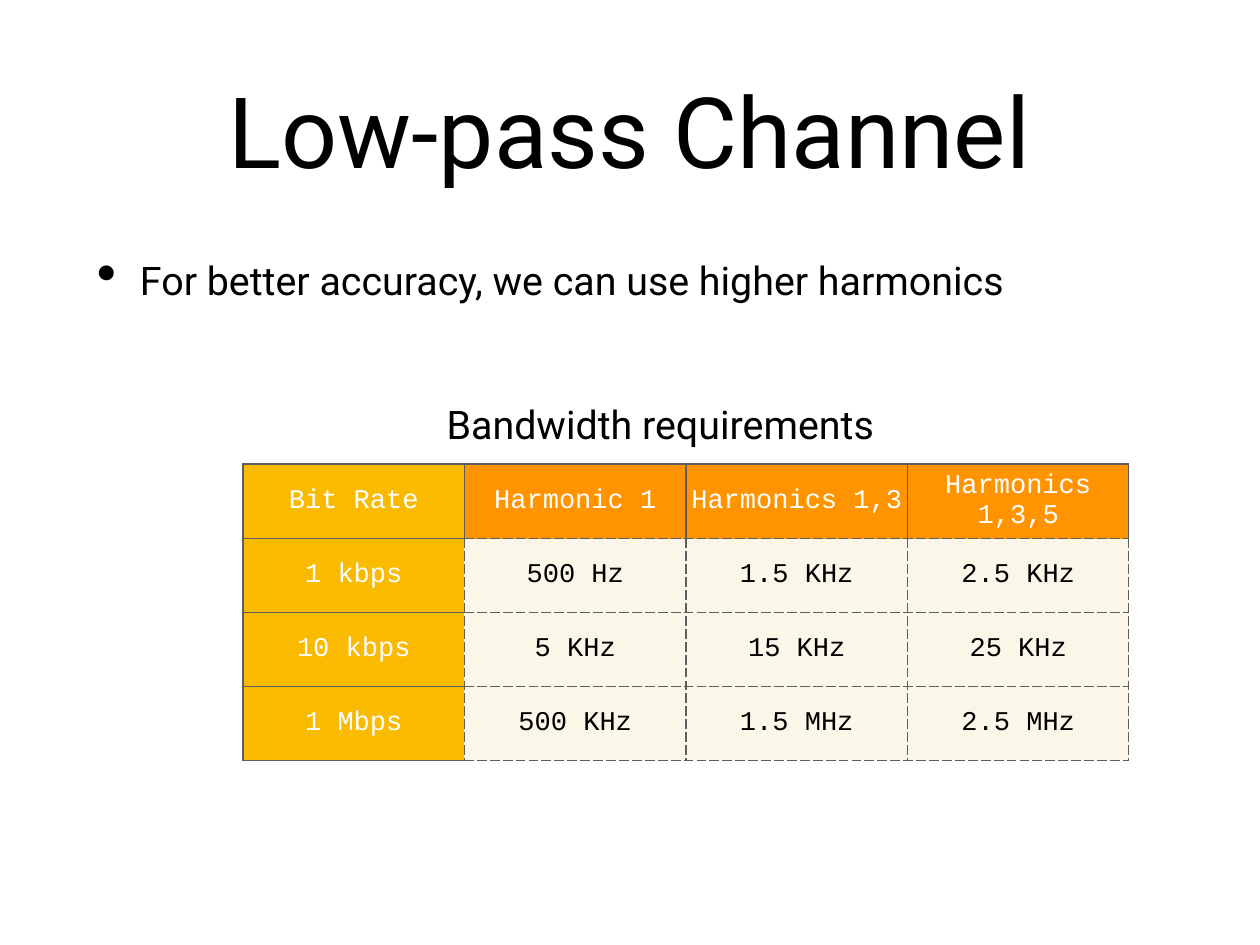
"""Build the low-pass channel slide with its bandwidth table."""
from dataclasses import dataclass
from typing import Any

from lxml.etree import SubElement
from pptx import Presentation
from pptx.dml.color import RGBColor
from pptx.enum.text import MSO_ANCHOR, PP_ALIGN
from pptx.oxml.ns import qn
from pptx.util import Emu, Pt

SCALE = 10321
INSET = 5
SANS, MONO = "Roboto", "Courier New"
BLACK, WHITE, EDGE = "000000", "FFFFFF", "5D5D5D"
ORANGE, GOLD, CREAM = "FF9400", "F9BA00", "FAF7E9"
SIDES = ("left", "right", "top", "bottom")
ROWS = (
    ("Bit Rate", "Harmonic 1", "Harmonics 1,3", "Harmonics 1,3,5"),
    ("1 kbps", "500 Hz", "1.5 KHz", "2.5 KHz"),
    ("10 kbps", "5 KHz", "15 KHz", "25 KHz"),
    ("1 Mbps", "500 KHz", "1.5 MHz", "2.5 MHz"),
)


@dataclass(frozen=True)
class Label:
    text: str
    left: int
    top: int
    width: int
    height: int
    size: int
    align: PP_ALIGN = PP_ALIGN.CENTER
    anchor: MSO_ANCHOR = MSO_ANCHOR.MIDDLE
    wrap: bool = True
    bullet: bool = False


LABELS = (
    Label("Low-pass Channel", 92, 25, 1076, 209, 80),
    Label("For better accuracy, we can use higher harmonics", 92, 251, 1076, 610, 32,
          align=PP_ALIGN.LEFT, anchor=MSO_ANCHOR.TOP, bullet=True),
    Label("Bandwidth requirements", 440, 396, 441, 56, 32, wrap=False),
)


def px(count: int) -> Emu:
    return Emu(count * SCALE)


def hue(code: str) -> RGBColor:
    return RGBColor.from_string(code)


def apply(target: Any, values: dict[str, Any]) -> None:
    for name, value in values.items():
        setattr(target, name, value)


def style(para: Any, font: str, size: int, color: str, align: PP_ALIGN) -> None:
    para.alignment = align
    apply(para.font, {"name": font, "size": Pt(size)})
    para.font.color.rgb = hue(color)


def add_bullet(para: Any) -> None:
    props = para._p.get_or_add_pPr()
    props.set("marL", str(px(43)))
    props.set("indent", str(-px(43)))
    SubElement(props, qn("a:buSzPct"), val="145000")
    SubElement(props, qn("a:buChar"), char="•")


def add_label(slide: Any, label: Label) -> None:
    box = slide.shapes.add_textbox(*map(px, (label.left, label.top, label.width, label.height)))
    frame = box.text_frame
    apply(frame, {f"margin_{side}": px(INSET) for side in SIDES})
    apply(frame, {"word_wrap": label.wrap, "vertical_anchor": label.anchor})
    para = frame.paragraphs[0]
    para.text = label.text
    style(para, SANS, label.size, BLACK, label.align)
    if label.bullet:
        add_bullet(para)


def add_edge(cell: Any, side: str, dash: bool) -> None:
    props = cell._tc.get_or_add_tcPr()
    line = SubElement(props, qn(f"a:ln{side}"), w=str(Pt(1)))
    fill = SubElement(line, qn("a:solidFill"))
    SubElement(fill, qn("a:srgbClr"), val=EDGE)
    SubElement(line, qn("a:prstDash"), val="lgDash" if dash else "solid")


def fill_cell(cell: Any, text: str, row: int, col: int) -> None:
    inner = row > 0 and col > 0
    dashes = {"L": inner, "R": row > 0, "T": inner, "B": col > 0}
    for side, dash in dashes.items():
        add_edge(cell, side, dash)
    cell.fill.solid()
    cell.fill.fore_color.rgb = hue(CREAM if inner else ORANGE if col else GOLD)
    apply(cell, {f"margin_{side}": px(INSET) for side in SIDES})
    apply(cell, {"text": text, "vertical_anchor": MSO_ANCHOR.MIDDLE})
    style(cell.text_frame.paragraphs[0], MONO, 22, BLACK if inner else WHITE, PP_ALIGN.CENTER)


def add_grid(slide: Any) -> None:
    place = map(px, (243, 464, 886, 295))
    table = slide.shapes.add_table(len(ROWS), len(ROWS[0]), *place).table
    for row, texts in enumerate(ROWS):
        for col, text in enumerate(texts):
            fill_cell(table.cell(row, col), text, row, col)


def main() -> None:
    deck = Presentation()
    apply(deck, {"slide_width": px(1260), "slide_height": px(945)})
    slide = deck.slides.add_slide(deck.slide_layouts[6])
    for label in LABELS:
        add_label(slide, label)
    add_grid(slide)
    deck.save("out.pptx")


if __name__ == "__main__":
    main()
